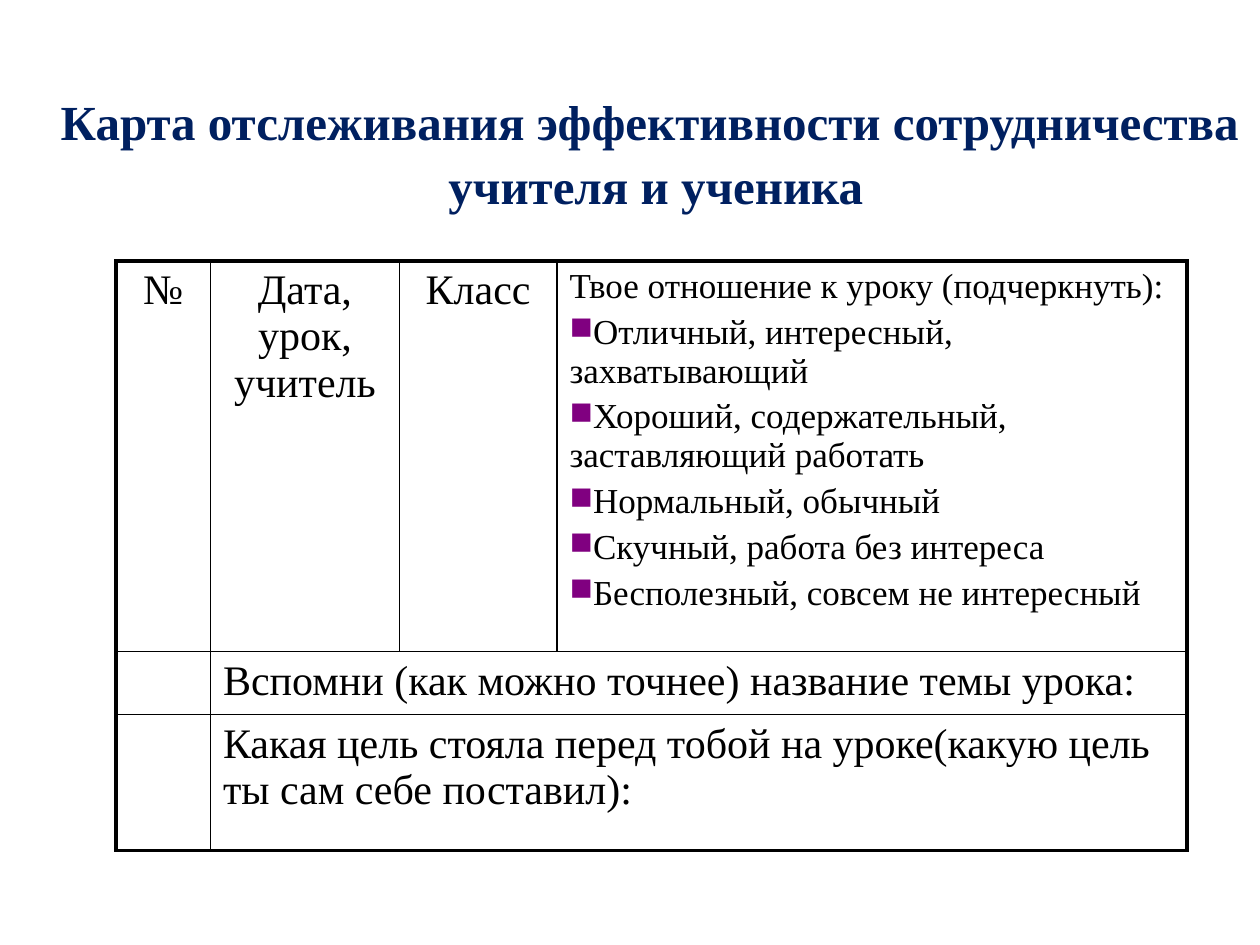
from dataclasses import dataclass

from lxml.etree import SubElement as Sub
from pptx import Presentation
from pptx.dml.color import RGBColor as Color
from pptx.enum.text import MSO_ANCHOR as Anchor, MSO_AUTO_SIZE as Fit, PP_ALIGN as Align
from pptx.oxml.ns import qn
from pptx.util import Inches, Pt


@dataclass(frozen=True)
class Theme:
    font: str = "Times New Roman"
    navy: str = "002060"
    ink: str = "000000"
    mark: str = "800080"
    head: int = 28
    body: int = 24
    small: int = 20
    thick: float = 2.25
    thin: float = 1


def write(para, text, font, size, color, bold=False, align=Align.LEFT, before=0, bullet=None):
    para.alignment = align
    para.space_before = Pt(before)
    run = para.add_run()
    run.text = text
    run.font.name = font
    run.font.size = Pt(size)
    run.font.bold = bold
    run.font.color.rgb = Color.from_string(color)
    if bullet:
        props = para._p.get_or_add_pPr()
        props.set("marL", "0")
        props.set("indent", "0")
        Sub(Sub(props, qn("a:buClr")), qn("a:srgbClr"), val=bullet)
        Sub(props, qn("a:buSzPct"), val="90000")
        Sub(props, qn("a:buChar"), char="■")


class Deck:
    def __init__(self, theme):
        self.theme = theme
        self.show = Presentation()
        self.show.slide_width, self.show.slide_height = Inches(10), Inches(7.5)
        self.slide = self.show.slides.add_slide(self.show.slide_layouts[5])

    def title(self, lines, box):
        shape = self.slide.shapes.title
        shape.left, shape.top, shape.width, shape.height = map(Inches, box)
        frame = shape.text_frame
        frame.word_wrap = False
        frame.auto_size = Fit.SHAPE_TO_FIT_TEXT
        frame.vertical_anchor = Anchor.MIDDLE
        for i, line in enumerate(lines):
            para = frame.add_paragraph() if i else frame.paragraphs[0]
            para.line_spacing = 1.1
            write(para, line, self.theme.font, self.theme.head, self.theme.navy,
                  bold=True, align=Align.CENTER)

    def grid(self, left, top, cols, rows):
        frame = self.slide.shapes.add_table(
            len(rows), len(cols), Inches(left), Inches(top),
            Inches(sum(cols)), Inches(sum(rows)))
        table = frame.table
        table.first_row = table.horz_banding = False
        for col, width in zip(table.columns, cols):
            col.width = Inches(width)
        for row, height in zip(table.rows, rows):
            row.height = Inches(height)
        return table

    def edges(self, table):
        last_row, last_col = len(table.rows) - 1, len(table.columns) - 1
        for r in range(last_row + 1):
            for c in range(last_col + 1):
                cell = table.cell(r, c)
                end = c + cell.span_width - 1 if cell.is_merge_origin else c
                outer = {"L": c == 0, "R": end == last_col, "T": r == 0, "B": r == last_row}
                props = cell._tc.get_or_add_tcPr()
                for side, thick in outer.items():
                    width = Pt(self.theme.thick if thick else self.theme.thin)
                    line = Sub(props, qn(f"a:ln{side}"), w=str(width))
                    Sub(Sub(line, qn("a:solidFill")), qn("a:srgbClr"), val=self.theme.ink)
                cell.fill.background()

    def fill(self, cell, lines, size, align=Align.LEFT, listed=False):
        frame = cell.text_frame
        for i, line in enumerate(lines):
            para = frame.add_paragraph() if i else frame.paragraphs[0]
            write(para, line, self.theme.font, size, self.theme.ink, align=align,
                  before=size * 0.2, bullet=self.theme.mark if listed and i else None)


def main():
    theme = Theme()
    deck = Deck(theme)
    deck.title(["Карта отслеживания эффективности сотрудничества ", "учителя и ученика"],
               (0.33, 0.67, 9.75, 1.04))
    table = deck.grid(0.92, 2.07, [0.75, 1.5, 1.25, 5], [3.1, 0.5, 1.08])

    for c, text in enumerate(["№", "Дата, урок, учитель", "Класс"]):
        deck.fill(table.cell(0, c), [text], theme.body, align=Align.CENTER)
    deck.fill(table.cell(0, 3), [
        "Твое отношение к уроку (подчеркнуть):",
        "Отличный, интересный, захватывающий",
        "Хороший, содержательный, заставляющий работать",
        "Нормальный, обычный",
        "Скучный, работа без интереса",
        "Бесполезный, совсем не интересный",
    ], theme.small, listed=True)

    asks = [
        "Вспомни (как можно точнее) название темы урока:",
        "Какая цель стояла перед тобой на уроке(какую цель ты сам себе поставил):",
    ]
    for r, text in enumerate(asks, 1):
        table.cell(r, 1).merge(table.cell(r, 3))
        deck.fill(table.cell(r, 1), [text], theme.body)
    deck.edges(table)
    deck.show.save("out.pptx")


if __name__ == "__main__":
    main()
